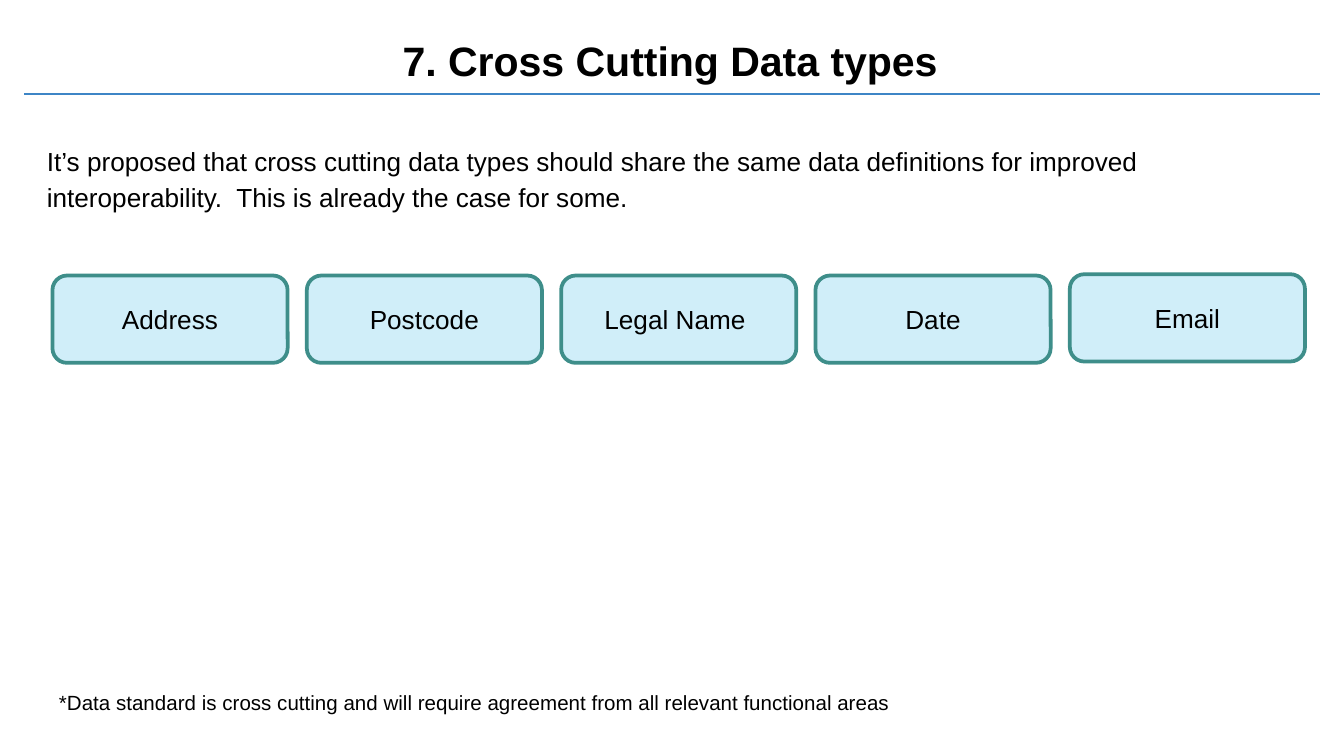
import pptx
import pptx.util
import pptx.dml.color
import pptx.enum.shapes
import pptx.enum.text
import pptx.oxml.ns
from lxml import etree

Inches = pptx.util.Inches
Pt = pptx.util.Pt
RGBColor = pptx.dml.color.RGBColor
PP_ALIGN = pptx.enum.text.PP_ALIGN
MSO_ANCHOR = pptx.enum.text.MSO_ANCHOR

BLACK = RGBColor(0x00, 0x00, 0x00)
RULE_BLUE = RGBColor(0x3D, 0x85, 0xC6)
BOX_FILL = RGBColor(0xD0, 0xEE, 0xF9)
BOX_LINE = RGBColor(0x3E, 0x8E, 0x8A)


def set_text(sp, text, size, inset_x, inset_y, anchor=MSO_ANCHOR.TOP,
             align=PP_ALIGN.LEFT, bold=False):
    tf = sp.text_frame
    tf.word_wrap = True
    tf.vertical_anchor = anchor
    tf.margin_left = tf.margin_right = Inches(inset_x)
    tf.margin_top = tf.margin_bottom = Inches(inset_y)
    p = tf.paragraphs[0]
    p.alignment = align
    r = p.add_run()
    r.text = text
    r.font.name = "Arial"
    r.font.size = Pt(size)
    r.font.bold = bold
    r.font.color.rgb = BLACK
    return p


# Blank 16:9 slide
prs = pptx.Presentation()
prs.slide_width = Inches(10)
prs.slide_height = prs.slide_width * 9 // 16
s = prs.slides.add_slide(prs.slide_layouts[6])

# Rule under the title
rule = s.shapes.add_connector(pptx.enum.shapes.MSO_CONNECTOR.STRAIGHT,
                              Inches(0.18), Inches(0.7), Inches(9.82), Inches(0.7))
rule.line.color.rgb = RULE_BLUE
rule.line.width = Pt(1.5)
etree.SubElement(rule._element.spPr, pptx.oxml.ns.qn("a:effectLst"))

# Introduction
intro = s.shapes.add_textbox(Inches(0.25), Inches(0.95), Inches(9.55), Inches(1.25))
p = set_text(intro, "It’s proposed that cross cutting data types should share the same "
             "data definitions for improved interoperability.  This is already the "
             "case for some.", 14, 0.1, 0.1)
p.line_spacing = 1.15

# Footnote
note = s.shapes.add_textbox(Inches(0.34), Inches(5.04), Inches(8.22), Inches(0.39))
set_text(note, "*Data standard is cross cutting and will require agreement from all "
         "relevant functional areas", 11, 0.1, 0.1)

# Row of data types; the last box sits slightly higher
first_left, last_left = 0.39, 7.96
data_types = [("Address", 2.05), ("Postcode", 2.05), ("Legal Name ", 2.05),
              ("Date", 2.05), ("Email", 2.04)]
pitch = (last_left - first_left) / (len(data_types) - 1)
for i, (label, top) in enumerate(data_types):
    sp = s.shapes.add_shape(pptx.enum.shapes.MSO_SHAPE.ROUNDED_RECTANGLE,
                            Inches(first_left + i * pitch), Inches(top),
                            Inches(1.75), Inches(0.65))
    sp.shadow.inherit = False
    sp.fill.solid()
    sp.fill.fore_color.rgb = BOX_FILL
    sp.line.color.rgb = BOX_LINE
    sp.line.width = Pt(2)
    set_text(sp, label, 14, 0.1, 0.05, MSO_ANCHOR.MIDDLE, PP_ALIGN.CENTER)

# Title
title = s.shapes.add_textbox(Inches(0.33), Inches(0.15), Inches(9.4), Inches(0.59))
set_text(title, "7. Cross Cutting Data types ", 22, 0.07, 0.04,
         MSO_ANCHOR.MIDDLE, PP_ALIGN.CENTER, bold=True)

prs.save("out.pptx")
